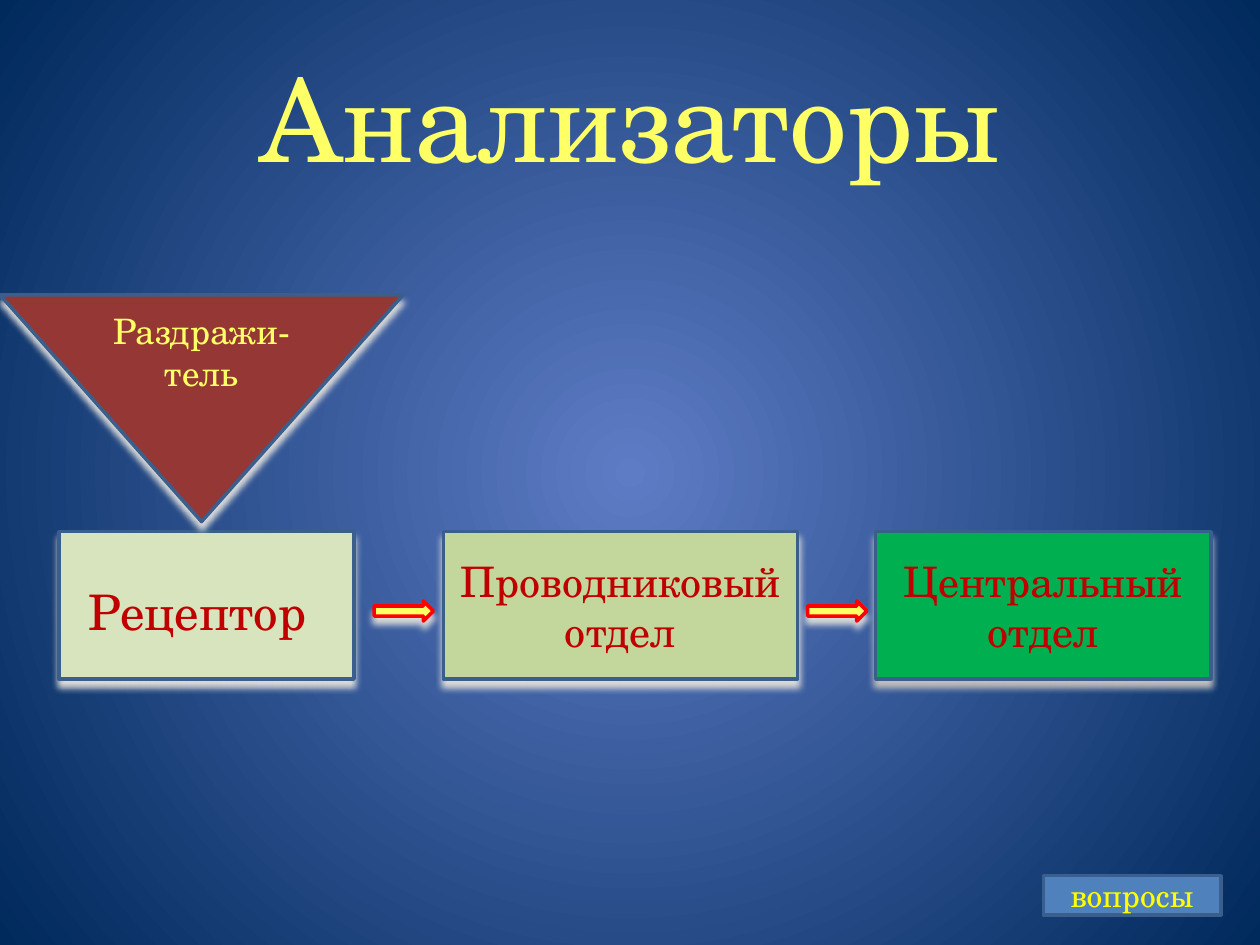
from dataclasses import dataclass
from typing import Optional

from lxml import etree
from pptx import Presentation
from pptx.dml.color import RGBColor
from pptx.enum.shapes import MSO_SHAPE
from pptx.enum.text import MSO_ANCHOR, PP_ALIGN
from pptx.oxml.ns import qn
from pptx.util import Inches, Pt

RECTANGLE = MSO_SHAPE.RECTANGLE
ARROW = MSO_SHAPE.RIGHT_ARROW
TRIANGLE = MSO_SHAPE.FLOWCHART_MERGE
BUTTON = MSO_SHAPE.ACTION_BUTTON_CUSTOM
CENTER = PP_ALIGN.CENTER
MIDDLE = MSO_ANCHOR.MIDDLE

FONT = "TeX Gyre Schola"
LIGHT_BLUE = RGBColor(0x5E, 0x7C, 0xC5)
NAVY = RGBColor(0x00, 0x29, 0x5C)
BLUE = RGBColor(0x4F, 0x81, 0xBD)
OUTLINE = RGBColor(0x3A, 0x5F, 0x8C)
PALE_YELLOW = RGBColor(0xFF, 0xFF, 0x66)
YELLOW = RGBColor(0xFF, 0xFF, 0x00)
RED = RGBColor(0xFF, 0x00, 0x00)
DARK_RED = RGBColor(0xC0, 0x00, 0x00)
BROWN = RGBColor(0x95, 0x37, 0x35)
PALE_GREEN = RGBColor(0xD7, 0xE4, 0xBD)
OLIVE = RGBColor(0xC3, 0xD6, 0x9B)
GREEN = RGBColor(0x00, 0xB0, 0x50)
LIGHT_GRAY = RGBColor(0xD9, 0xD9, 0xD9)
GRAY = RGBColor(0xBF, 0xBF, 0xBF)

STAGE_TOP, STAGE_HEIGHT = 4.22, 1.17
ARROW_TOP, ARROW_WIDTH, ARROW_HEIGHT = 4.77, 0.47, 0.16


@dataclass(frozen=True)
class Block:
    kind: MSO_SHAPE
    left: float
    top: float
    width: float
    height: float
    fill: RGBColor
    runs: tuple[tuple[str, int], ...] = ()
    text_color: RGBColor = DARK_RED
    line: RGBColor = OUTLINE
    shadow: Optional[RGBColor] = LIGHT_GRAY


def stage(left: float, width: float, fill: RGBColor, *runs: tuple[str, int],
          shadow: RGBColor = LIGHT_GRAY) -> Block:
    return Block(RECTANGLE, left, STAGE_TOP, width, STAGE_HEIGHT, fill, runs, shadow=shadow)


def arrow(left: float) -> Block:
    return Block(ARROW, left, ARROW_TOP, ARROW_WIDTH, ARROW_HEIGHT, PALE_YELLOW, line=RED)


BLOCKS = (
    # The larger trailing space moves the word a little left of centre.
    stage(0.47, 2.34, PALE_GREEN, ("Рецептор", 28), (" ", 36)),
    stage(3.52, 2.81, OLIVE, ("Проводниковый отдел", 24)),
    stage(6.95, 2.66, GREEN, ("Центральный отдел", 24), shadow=GRAY),
    arrow(2.97),
    arrow(6.41),
    Block(TRIANGLE, 0, 2.34, 3.2, 1.8, BROWN, (("Раздражи-тель", 20),), PALE_YELLOW),
    Block(BUTTON, 8.28, 6.95, 1.41, 0.31, BLUE, (("вопросы", 18),), YELLOW, shadow=None),
)


def paint_background(slide) -> None:
    """Fill the slide with a gradient spreading from its centre."""
    fill = slide.background.fill
    fill.gradient()
    for stop, color, position in zip(fill.gradient_stops, (LIGHT_BLUE, NAVY), (0, 1)):
        stop.color.rgb = color
        stop.position = position
    gradient = slide.background._cSld.find(".//" + qn("a:gradFill"))
    linear = gradient.find(qn("a:lin"))
    circle = etree.Element(qn("a:path"), path="circle")
    etree.SubElement(circle, qn("a:fillToRect"), l="50000", t="50000", r="50000", b="50000")
    gradient.replace(linear, circle)


def add_shadow(shape, color: RGBColor) -> None:
    effects = shape._element.spPr.find(qn("a:effectLst"))
    shadow = etree.SubElement(effects, qn("a:outerShdw"), blurRad=str(Pt(4)),
                              dist=str(Pt(4)), dir="5400000", algn="t", rotWithShape="0")
    etree.SubElement(shadow, qn("a:srgbClr"), val=str(color))


def write_text(shape, runs: tuple[tuple[str, int], ...], color: RGBColor) -> None:
    frame = shape.text_frame
    frame.word_wrap = True
    frame.vertical_anchor = MIDDLE
    paragraph = frame.paragraphs[0]
    paragraph.alignment = CENTER
    for text, size in runs:
        run = paragraph.add_run()
        run.text = text
        for name, value in {"name": FONT, "size": Pt(size)}.items():
            setattr(run.font, name, value)
        run.font.color.rgb = color


def add_block(slide, block: Block) -> None:
    box = map(Inches, (block.left, block.top, block.width, block.height))
    shape = slide.shapes.add_shape(block.kind, *box)
    shape.fill.solid()
    shape.fill.fore_color.rgb = block.fill
    shape.line.color.rgb = block.line
    shape.line.width = Pt(2)
    shape.shadow.inherit = False
    if block.shadow is not None:
        add_shadow(shape, block.shadow)
    if block.runs:
        write_text(shape, block.runs, block.text_color)


def add_title(slide) -> None:
    title = slide.shapes.title
    place = {"left": 0.5, "top": 0.3, "width": 9, "height": 1.25}
    for name, value in place.items():
        setattr(title, name, Inches(value))
    write_text(title, (("Анализаторы", 66),), PALE_YELLOW)


def main() -> None:
    presentation = Presentation()
    presentation.slide_width = Inches(10)
    presentation.slide_height = Inches(7.5)
    slide = presentation.slides.add_slide(presentation.slide_layouts.get_by_name("Title Only"))
    paint_background(slide)
    add_title(slide)
    for block in BLOCKS:
        add_block(slide, block)
    presentation.save("out.pptx")


if __name__ == "__main__":
    main()
